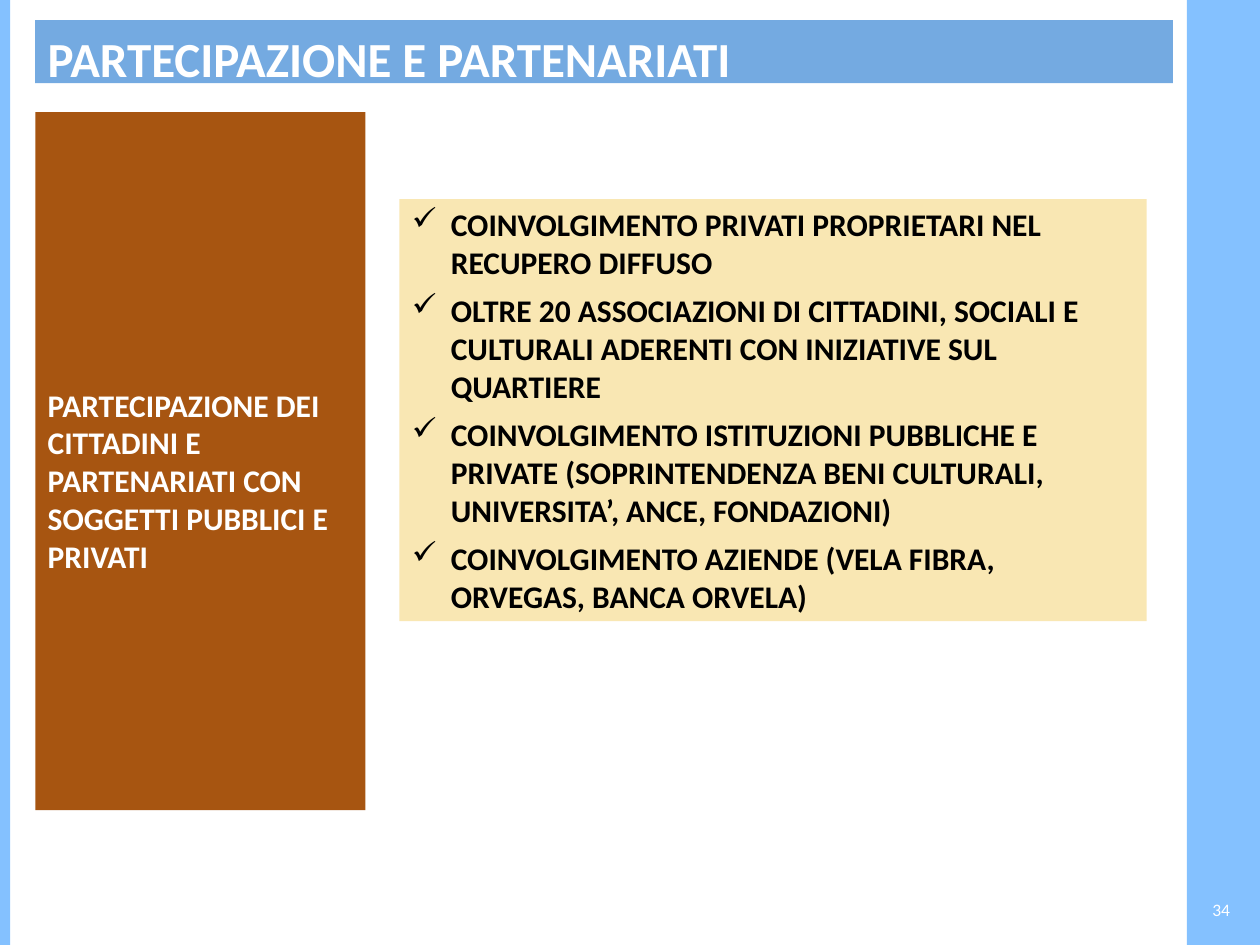
"""Build the slide on participation and partnerships."""
from dataclasses import dataclass

from lxml import etree
from pptx import Presentation
from pptx.dml.color import RGBColor
from pptx.enum.shapes import MSO_SHAPE
from pptx.enum.text import MSO_ANCHOR, PP_ALIGN
from pptx.oxml.ns import qn
from pptx.util import Inches, Pt

RECTANGLE = MSO_SHAPE.RECTANGLE
TOP, MIDDLE = MSO_ANCHOR.TOP, MSO_ANCHOR.MIDDLE
LEFT, RIGHT = PP_ALIGN.LEFT, PP_ALIGN.RIGHT
BLANK_LAYOUT = 6
COLUMNS, ROWS = 100, 75
CELL = Inches(0.1)


@dataclass(frozen=True)
class Theme:
    """Colours, font and type sizes of the slide."""
    font: str = "Calibri"
    edge: str = "84C1FF"
    banner: str = "74AAE1"
    topic: str = "A75511"
    panel: str = "F9E7B3"
    light: str = "FFFFFF"
    dark: str = "000000"
    title_size: int = 28
    body_size: int = 18
    number_size: int = 10


@dataclass(frozen=True)
class Area:
    """Rectangle in grid columns and rows."""
    column: float
    row: float
    columns: float
    rows: float

    def lengths(self) -> list[int]:
        """Return left, top, width and height as slide lengths."""
        return [round(value * CELL) for value in (self.column, self.row, self.columns, self.rows)]


@dataclass(frozen=True)
class Label:
    """Text with its style and placement inside a shape."""
    paragraphs: tuple[str, ...]
    size: int
    color: str
    bold: bool = True
    anchor: MSO_ANCHOR = TOP
    alignment: PP_ALIGN = LEFT
    top_inset: float = 0.05
    checked: bool = False


THEME = Theme()
EDGES = (Area(94.2, 0, 5.8, ROWS), Area(0, 0, 0.8, ROWS))
TOPIC = Label(
    ("PARTECIPAZIONE DEI CITTADINI E PARTENARIATI CON SOGGETTI PUBBLICI E PRIVATI",),
    THEME.body_size, THEME.light, anchor=MIDDLE, top_inset=0.35)
TITLE = Label(("PARTECIPAZIONE E PARTENARIATI",), THEME.title_size, THEME.light, top_inset=0.07)
NUMBER = Label(("34",), THEME.number_size, THEME.light, bold=False, anchor=MIDDLE, alignment=RIGHT)
ACTIONS = Label((
    "COINVOLGIMENTO PRIVATI PROPRIETARI NEL RECUPERO DIFFUSO",
    "OLTRE 20 ASSOCIAZIONI DI CITTADINI, SOCIALI E CULTURALI ADERENTI CON INIZIATIVE SUL QUARTIERE",
    "COINVOLGIMENTO ISTITUZIONI PUBBLICHE E PRIVATE (SOPRINTENDENZA BENI CULTURALI, "
    "UNIVERSITA’, ANCE, FONDAZIONI)",
    "COINVOLGIMENTO AZIENDE (VELA FIBRA, ORVEGAS, BANCA ORVELA)",
), THEME.body_size, THEME.dark, checked=True)


def add_check(paragraph) -> None:
    """Give a paragraph a hanging check mark."""
    properties = paragraph._p.get_or_add_pPr()
    properties.set("marL", str(Inches(0.31)))
    properties.set("indent", str(-Inches(0.31)))
    color = etree.SubElement(properties, qn("a:buClr"))
    etree.SubElement(color, qn("a:srgbClr"), val=THEME.dark)
    etree.SubElement(properties, qn("a:buChar"), char="✓")
    paragraph.space_after = Pt(6)


def write(shape, label: Label) -> None:
    """Put a label into a shape."""
    frame = shape.text_frame
    frame.word_wrap = True
    frame.vertical_anchor = label.anchor
    frame.margin_top = Inches(label.top_inset)
    frame.text = "\n".join(label.paragraphs)
    for paragraph in frame.paragraphs:
        paragraph.alignment = label.alignment
        if label.checked:
            add_check(paragraph)
        for run in paragraph.runs:
            run.font.name = THEME.font
            run.font.size = Pt(label.size)
            run.font.bold = label.bold
            run.font.color.rgb = RGBColor.from_string(label.color)


def add_block(slide, area: Area, fill: str, label: Label | None = None) -> None:
    """Draw a filled rectangle with an optional label."""
    shape = slide.shapes.add_shape(RECTANGLE, *area.lengths())
    shape.shadow.inherit = False
    shape.fill.solid()
    shape.fill.fore_color.rgb = RGBColor.from_string(fill)
    shape.line.fill.background()
    if label:
        write(shape, label)


def main() -> None:
    """Build and save the presentation."""
    presentation = Presentation()
    presentation.slide_width, presentation.slide_height = COLUMNS * CELL, ROWS * CELL
    slide = presentation.slides.add_slide(presentation.slide_layouts[BLANK_LAYOUT])
    for edge in EDGES:
        add_block(slide, edge, THEME.edge)
    add_block(slide, Area(2.8, 8.9, 26.2, 55.4), THEME.topic, TOPIC)
    add_block(slide, Area(2.8, 1.6, 90.3, 5), THEME.banner, TITLE)
    write(slide.shapes.add_textbox(*Area(87.8, 70.5, 10.8, 3.3).lengths()), NUMBER)
    add_block(slide, Area(31.7, 15.8, 59.3, 33.5), THEME.panel, ACTIONS)
    presentation.save("out.pptx")


if __name__ == "__main__":
    main()
